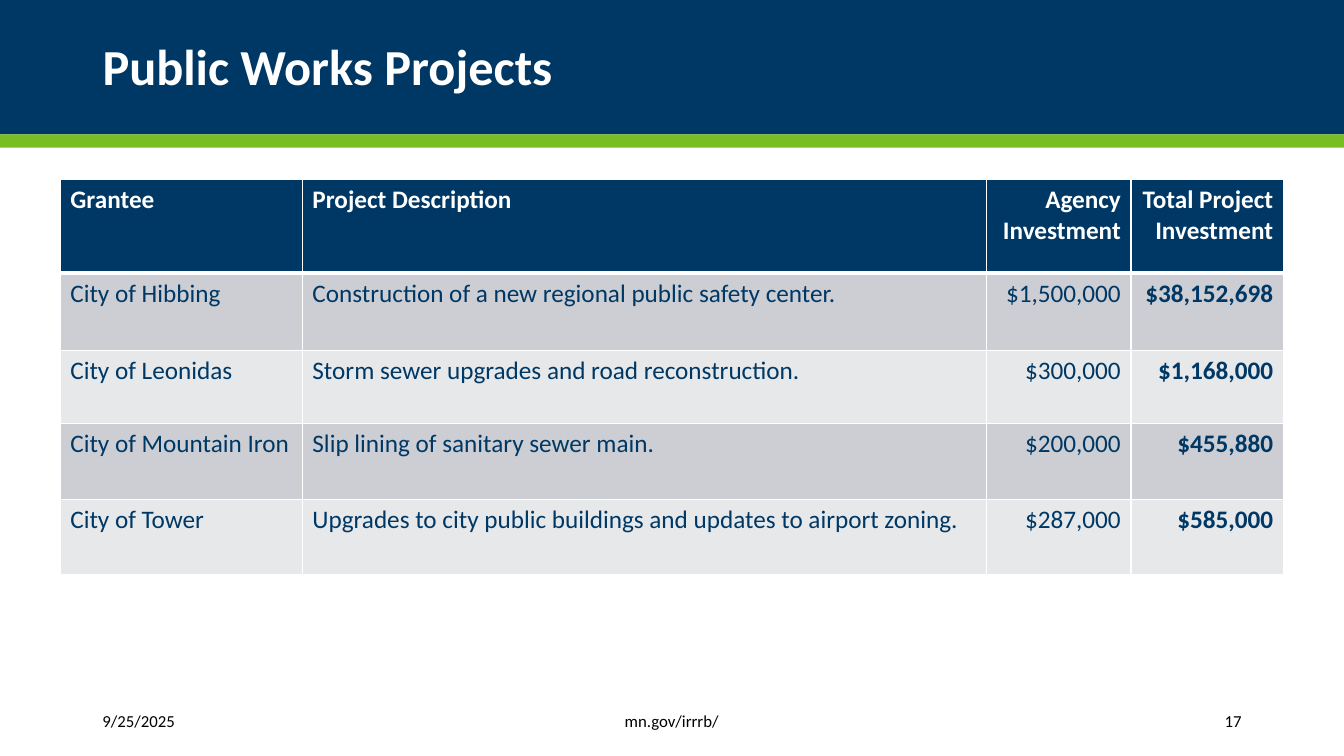
from dataclasses import dataclass

from lxml.etree import SubElement
from pptx import Presentation
from pptx.dml.color import RGBColor
from pptx.enum.shapes import MSO_SHAPE
from pptx.enum.text import MSO_ANCHOR, PP_ALIGN
from pptx.oxml.ns import qn
from pptx.slide import Slide
from pptx.table import _Cell as Cell
from pptx.text.text import TextFrame
from pptx.util import Cm, Pt

NAVY, GREEN, WHITE, BLACK = "003865", "78BE21", "FFFFFF", "000000"
ROW_FILLS = ("CCCED3", "E7E8EA")
SLIDE_WIDTH, SLIDE_HEIGHT = 33.87, 19.05
FOOTER_TOP, FOOTER_HEIGHT = 17.65, 1.02


@dataclass(frozen=True)
class Band:
    top: float
    height: float
    color: str


@dataclass(frozen=True)
class FooterItem:
    text: str
    left: float
    width: float
    align: PP_ALIGN


@dataclass(frozen=True)
class Column:
    heading: str
    width: float
    align: PP_ALIGN = PP_ALIGN.LEFT
    bold: bool = False


@dataclass(frozen=True)
class Project:
    grantee: str
    description: str
    agency_investment: str
    total_investment: str
    height: float

    def values(self) -> tuple[str, ...]:
        return (self.grantee, self.description,
                self.agency_investment, self.total_investment)


BANDS = (Band(0, 3.39, NAVY), Band(3.39, 0.33, GREEN))
FOOTER = (
    FooterItem("9/25/2025", 2.33, 3.78, PP_ALIGN.LEFT),
    FooterItem("mn.gov/irrrb/", 9.17, 15.52, PP_ALIGN.CENTER),
    FooterItem("17", 27.48, 4.06, PP_ALIGN.RIGHT),
)
COLUMNS = (
    Column("Grantee", 6.1),
    Column("Project Description", 17.25),
    Column("Agency Investment", 3.63, PP_ALIGN.RIGHT),
    Column("Total Project Investment", 3.84, PP_ALIGN.RIGHT, bold=True),
)
HEADER_HEIGHT = 2.36
PROJECTS = (
    Project("City of Hibbing", "Construction of a new regional public safety center.",
            "$1,500,000", "$38,152,698", 1.96),
    Project("City of Leonidas", "Storm sewer upgrades and road reconstruction.",
            "$300,000", "$1,168,000", 1.83),
    Project("City of Mountain Iron", "Slip lining of sanitary sewer main.",
            "$200,000", "$455,880", 1.91),
    Project("City of Tower",
            "Upgrades to city public buildings and updates to airport zoning.",
            "$287,000", "$585,000", 1.91),
)


def rgb(color: str) -> RGBColor:
    return RGBColor.from_string(color)


def write_text(frame: TextFrame, text: str, *, size: float, color: str,
               bold: bool = False, align: PP_ALIGN = PP_ALIGN.LEFT,
               anchor: MSO_ANCHOR = MSO_ANCHOR.MIDDLE,
               line_spacing: float = 1.0) -> None:
    frame.word_wrap = True
    frame.vertical_anchor = anchor
    paragraph = frame.paragraphs[0]
    paragraph.alignment = align
    paragraph.line_spacing = line_spacing
    run = paragraph.add_run()
    run.text = text
    run.font.name = "Calibri"
    run.font.size = Pt(size)
    run.font.bold = bold
    run.font.color.rgb = rgb(color)


def add_band(slide: Slide, band: Band) -> None:
    shape = slide.shapes.add_shape(MSO_SHAPE.RECTANGLE, 0, Cm(band.top),
                                   Cm(SLIDE_WIDTH), Cm(band.height))
    shape.shadow.inherit = False
    shape.fill.solid()
    shape.fill.fore_color.rgb = rgb(band.color)
    shape.line.fill.background()


def add_title(slide: Slide, text: str) -> None:
    """Fill the title placeholder and bring it in front of the bands."""
    title = slide.shapes.title
    title.left, title.top, title.width, title.height = (
        Cm(2.33), Cm(0.48), Cm(29.21), Cm(2.54))
    write_text(title.text_frame, text, size=36, color=WHITE, bold=True,
               line_spacing=0.9)
    title.element.getparent().append(title.element)


def add_footer_item(slide: Slide, item: FooterItem) -> None:
    box = slide.shapes.add_textbox(Cm(item.left), Cm(FOOTER_TOP),
                                   Cm(item.width), Cm(FOOTER_HEIGHT))
    write_text(box.text_frame, item.text, size=12, color=BLACK, align=item.align)


def set_borders(cell: Cell, *, top: float, bottom: float) -> None:
    """Draw white borders; call before the fill, which must follow them in XML."""
    properties = cell._tc.get_or_add_tcPr()
    for side, width in (("L", 1), ("R", 1), ("T", top), ("B", bottom)):
        line = SubElement(properties, qn(f"a:ln{side}"), w=str(Pt(width)))
        fill = SubElement(line, qn("a:solidFill"))
        SubElement(fill, qn("a:srgbClr"), val=WHITE)


def add_project_table(slide: Slide) -> None:
    heights = [HEADER_HEIGHT, *(project.height for project in PROJECTS)]
    rows = [tuple(column.heading for column in COLUMNS),
            *(project.values() for project in PROJECTS)]
    table = slide.shapes.add_table(
        len(rows), len(COLUMNS), Cm(1.52), Cm(4.52),
        Cm(sum(column.width for column in COLUMNS)), Cm(sum(heights))).table

    for index, column in enumerate(COLUMNS):
        table.columns[index].width = Cm(column.width)
    for row_index, (height, texts) in enumerate(zip(heights, rows)):
        table.rows[row_index].height = Cm(height)
        is_header = row_index == 0
        fill = NAVY if is_header else ROW_FILLS[(row_index - 1) % 2]
        for column_index, (column, text) in enumerate(zip(COLUMNS, texts)):
            cell = table.cell(row_index, column_index)
            set_borders(cell, top=3 if row_index == 1 else 1,
                        bottom=3 if is_header else 1)
            cell.fill.solid()
            cell.fill.fore_color.rgb = rgb(fill)
            write_text(cell.text_frame, text, size=18,
                       color=WHITE if is_header else NAVY,
                       bold=is_header or column.bold, align=column.align,
                       anchor=MSO_ANCHOR.TOP)


def main() -> None:
    presentation = Presentation()
    presentation.slide_width = Cm(SLIDE_WIDTH)
    presentation.slide_height = Cm(SLIDE_HEIGHT)
    title_only = presentation.slide_layouts.get_by_name("Title Only")
    slide = presentation.slides.add_slide(title_only)
    for band in BANDS:
        add_band(slide, band)
    add_title(slide, "Public Works Projects")
    for item in FOOTER:
        add_footer_item(slide, item)
    add_project_table(slide)
    presentation.save("out.pptx")


if __name__ == "__main__":
    main()
